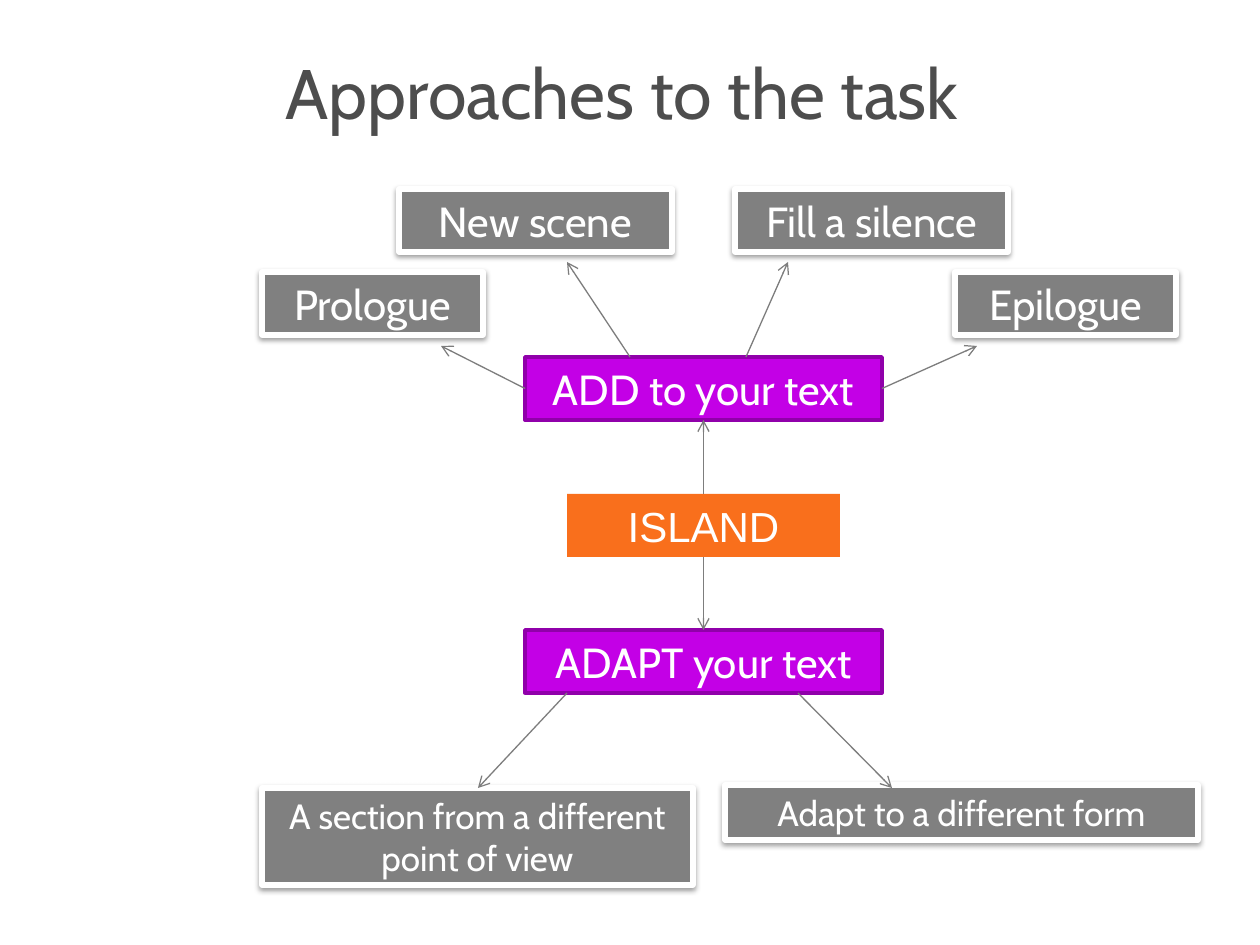
from lxml.etree import SubElement
from pptx import Presentation
from pptx.dml.color import RGBColor
from pptx.enum.shapes import MSO_CONNECTOR, MSO_SHAPE
from pptx.enum.text import MSO_ANCHOR, MSO_AUTO_SIZE, PP_ALIGN
from pptx.oxml.ns import qn
from pptx.util import Emu, Pt

EMU_PER_PX = 914400 / 126

WHITE = RGBColor(0xFF, 0xFF, 0xFF)
TITLE_GRAY = RGBColor(0x4D, 0x4D, 0x4D)
BOX_GRAY = RGBColor(0x80, 0x80, 0x80)
ARROW_GRAY = RGBColor(0x7D, 0x7D, 0x7D)
ORANGE = RGBColor(0xF9, 0x6F, 0x1C)
PURPLE = RGBColor(0xC3, 0x00, 0xE6)
DARK_PURPLE = RGBColor(0x90, 0x00, 0xAA)

TOP, LEFT, BOTTOM, RIGHT = range(4)


def px(*lengths):
    """Turn pixel lengths into a list of EMU lengths."""
    return [Emu(round(length * EMU_PER_PX)) for length in lengths]


def add_run(paragraph, text, size, color, font_name="Cabin"):
    run = paragraph.add_run()
    run.text = text
    run.font.name = font_name
    run.font.size = Pt(size)
    run.font.color.rgb = color


def set_title(slide, text):
    title = slide.shapes.title
    title.left, title.top, title.width, title.height = px(273, 42, 955, 98)
    title.text_frame.vertical_anchor = MSO_ANCHOR.MIDDLE
    paragraph = title.text_frame.paragraphs[0]
    paragraph.alignment = PP_ALIGN.LEFT
    add_run(paragraph, text, 40, TITLE_GRAY)


def add_box(slide, lines, bounds, fill, size=24, font_name="Cabin"):
    """Add a borderless rectangle with one centred paragraph for each line."""
    box = slide.shapes.add_shape(MSO_SHAPE.RECTANGLE, *px(*bounds))
    box.shadow.inherit = False
    box.fill.solid()
    box.fill.fore_color.rgb = fill
    box.line.fill.background()
    frame = box.text_frame
    frame.word_wrap = True
    frame.auto_size = MSO_AUTO_SIZE.SHAPE_TO_FIT_TEXT
    frame.vertical_anchor = MSO_ANCHOR.TOP
    for index, line in enumerate(lines):
        paragraph = frame.add_paragraph() if index else frame.paragraphs[0]
        paragraph.alignment = PP_ALIGN.CENTER
        add_run(paragraph, line, size, WHITE, font_name)
    return box


def set_border(shape, color, width):
    shape.line.color.rgb = color
    shape.line.width = Pt(width)


def add_approach(slide, text, bounds):
    box = add_box(slide, [text], bounds, PURPLE)
    set_border(box, DARK_PURPLE, 2)
    return box


def add_idea(slide, lines, bounds, size=24):
    """Add a gray box with a white border and a soft shadow below."""
    box = add_box(slide, lines, bounds, BOX_GRAY, size)
    set_border(box, WHITE, 3)
    effects = box._element.spPr.find(qn("a:effectLst"))
    shadow = SubElement(effects, qn("a:outerShdw"), blurRad=str(Pt(3.1)),
                        dist=str(Pt(1.6)), dir="5400000", rotWithShape="0")
    color = SubElement(shadow, qn("a:srgbClr"), val="000000")
    SubElement(color, qn("a:alpha"), val="38000")


def add_arrow(slide, start, end):
    arrow = slide.shapes.add_connector(MSO_CONNECTOR.STRAIGHT, *px(*start, *end))
    set_border(arrow, ARROW_GRAY, 0.75)
    SubElement(arrow.line._get_or_add_ln(), qn("a:tailEnd"), type="arrow")
    SubElement(arrow._element.spPr, qn("a:effectLst"))
    return arrow


def main():
    presentation = Presentation()
    presentation.slide_width, presentation.slide_height = px(1260, 945)
    slide = presentation.slides.add_slide(presentation.slide_layouts[5])
    set_title(slide, "Approaches to the task")

    island = add_box(slide, ["ISLAND"], (567, 494, 273, 63), ORANGE, font_name="Arial")
    add = add_approach(slide, "ADD to your text", (525, 357, 357, 63))
    adapt = add_approach(slide, "ADAPT your text", (525, 630, 357, 63))

    for text, bounds in (
        ("Epilogue", (955, 272, 221, 63)),
        ("Fill a silence", (735, 189, 273, 63)),
        ("New scene", (399, 189, 273, 63)),
        ("Prologue", (262, 272, 221, 63)),
    ):
        add_idea(slide, [text], bounds)
    add_idea(slide, ["Adapt to a different form"], (725, 785, 473, 55), 20)
    add_idea(slide, ["A section from a different", "point of view"],
             (262, 788, 431, 97), 20)

    for start, end in (
        ((746, 357), (788, 262)),
        ((630, 357), (567, 262)),
        ((798, 693), (892, 788)),
        ((567, 693), (478, 788)),
    ):
        add_arrow(slide, start, end)

    add_arrow(slide, (882, 389), (977, 346)).begin_connect(add, RIGHT)
    add_arrow(slide, (525, 389), (441, 346)).begin_connect(add, LEFT)
    for side, approach, approach_side, start_y, end_y in (
        (TOP, add, BOTTOM, 494, 420),
        (BOTTOM, adapt, TOP, 557, 630),
    ):
        arrow = add_arrow(slide, (704, start_y), (704, end_y))
        arrow.begin_connect(island, side)
        arrow.end_connect(approach, approach_side)

    presentation.save("out.pptx")


if __name__ == "__main__":
    main()
